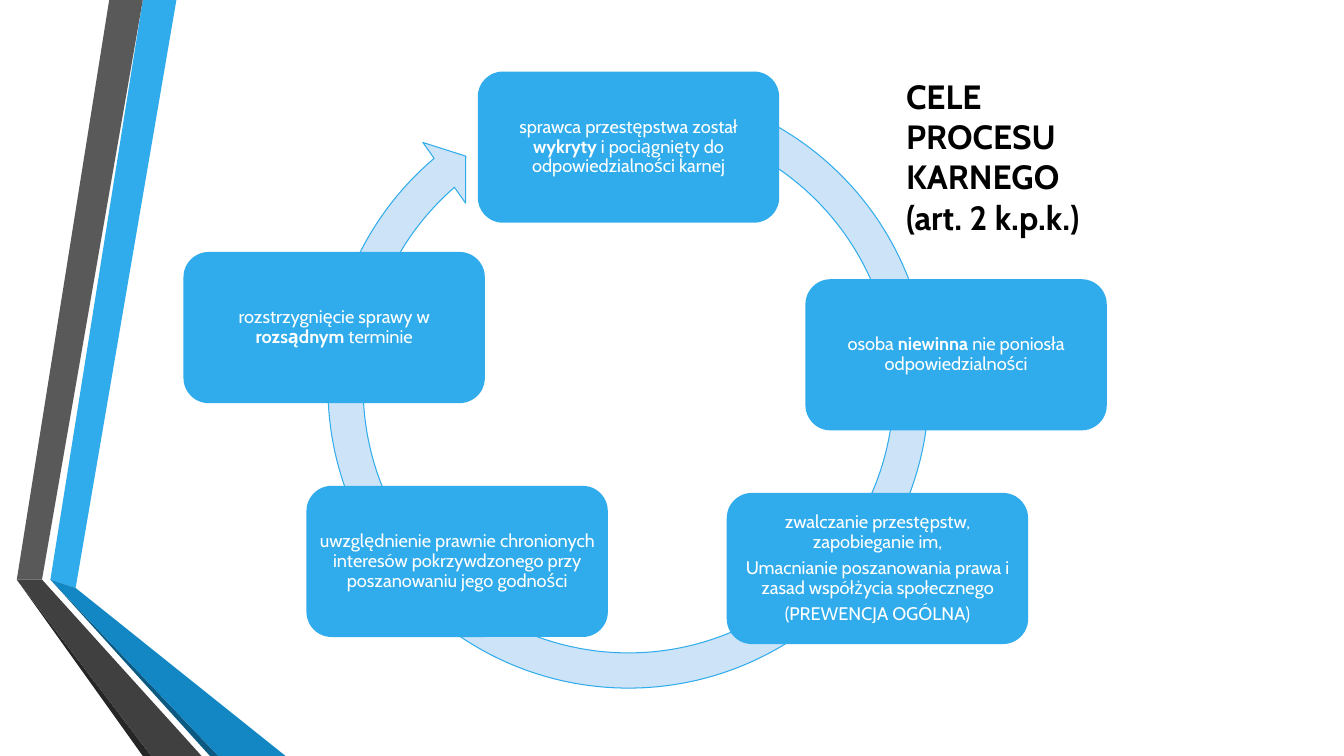
from collections import namedtuple
from dataclasses import dataclass

from pptx import Presentation
from pptx import util as u
from pptx.dml.color import RGBColor
from pptx.enum import shapes, text

Box = namedtuple("Box", "left top width height")
GRID = u.Inches(1) / 12
COLUMNS, ROWS = 160, 90


@dataclass(frozen=True)
class Theme:
    """Colours, font and type sizes of the slide."""
    font: str = "Cabin"
    title_size: int = 24
    card_size: int = 13
    sky: str = "30ACEC"
    pale: str = "CDE3F8"
    ocean: str = "1287C3"
    navy: str = "0C5A82"
    grey: str = "595959"
    charcoal: str = "404040"
    coal: str = "262626"
    white: str = "FFFFFF"
    black: str = "000000"


THEME = Theme()
RIBBONS = [
    (THEME.sky, [(4.08, 69.36), (7.32, 69.96), (18.84, 0), (15.48, 0)]),
    (THEME.grey, [(14.76, 0), (11.4, 0), (0, 68.76), (3.36, 69.24)]),
    (THEME.coal, [(0, 68.76), (15.48, 90), (16.2, 90)]),
    (THEME.navy, [(4.08, 69.48), (23.04, 90), (23.76, 90)]),
    (THEME.ocean, [(4.08, 69.36), (23.76, 90), (32.04, 90), (7.32, 69.96)]),
    (THEME.charcoal, [(22.32, 90), (3.36, 69.24), (0, 68.76), (16.2, 90)]),
]
CARD_WIDTH, CARD_HEIGHT = 35.88, 18
AIMS = [
    (35.04, 0.48, ["sprawca przestępstwa został *wykryty* i pociągnięty do odpowiedzialności karnej"]),
    (74.04, 25.2, ["osoba *niewinna* nie poniosła odpowiedzialności"]),
    (64.68, 50.64, ["zwalczanie przestępstw, zapobieganie im,",
                    "Umacnianie poszanowania prawa i zasad współżycia społecznego",
                    "(PREWENCJA OGÓLNA)"]),
    (14.64, 49.8, ["uwzględnienie prawnie chronionych interesów pokrzywdzonego "
                   "przy poszanowaniu jego godności"]),
    (0, 21.96, ["rozstrzygnięcie sprawy w *rozsądnym* terminie"]),
]
ARROW_LEFT, ARROW_SIZE = 14.88, 76.2
ARROW_ADJUSTMENTS = (0.055, 3.307, 137.627, 173.94, 0.058)


def place(box):
    """Turn a box in grid units into slide lengths."""
    return [u.Emu(round(length * GRID)) for length in box]


def paint(shape, fill, line=None):
    """Give a shape a flat fill and an optional thin outline."""
    shape.shadow.inherit = False
    shape.fill.solid()
    shape.fill.fore_color.rgb = RGBColor.from_string(fill)
    if line:
        shape.line.color.rgb = RGBColor.from_string(line)
        shape.line.width = u.Pt(0.75)
    else:
        shape.line.fill.background()


def write(frame, paragraphs, size, color, bold=False, align=None, spacing=None, after=None):
    """Fill a text frame; parts between asterisks are bold, newlines break the line."""
    frame.word_wrap = True
    for number, content in enumerate(paragraphs):
        paragraph = frame.add_paragraph() if number else frame.paragraphs[0]
        paragraph.alignment = align
        paragraph.line_spacing = spacing
        paragraph.space_after = after
        for row, line in enumerate(content.split("\n")):
            if row:
                paragraph.add_line_break()
            for part, words in enumerate(line.split("*")):
                run = paragraph.add_run()
                run.text = words
                run.font.name = THEME.font
                run.font.size = u.Pt(size)
                run.font.bold = bold or part % 2 == 1
                run.font.color.rgb = RGBColor.from_string(color)


def add_ribbons(slide, box):
    """Draw the folded ribbons along the left edge."""
    for color, points in RIBBONS:
        corners = [(box.left + x, box.top + y) for x, y in points]
        builder = slide.shapes.build_freeform(*corners[0], scale=GRID)
        builder.add_line_segments(corners[1:], close=True)
        paint(builder.convert_to_shape(), color)


def add_card(slide, box, paragraphs):
    """Draw one rounded card with centred text."""
    card = slide.shapes.add_shape(shapes.MSO_SHAPE.ROUNDED_RECTANGLE, *place(box))
    paint(card, THEME.sky)
    frame = card.text_frame
    frame.vertical_anchor = text.MSO_ANCHOR.MIDDLE
    frame.margin_left = frame.margin_right = u.Inches(0.05)
    frame.margin_top = frame.margin_bottom = u.Inches(0.05)
    write(frame, paragraphs, THEME.card_size, THEME.white,
          align=text.PP_ALIGN.CENTER, spacing=0.9, after=u.Pt(4.5))


def add_cycle(slide, box):
    """Draw the circular arrow and the cards around it."""
    ring = Box(box.left + ARROW_LEFT, box.top, ARROW_SIZE, ARROW_SIZE)
    arrow = slide.shapes.add_shape(shapes.MSO_SHAPE.CIRCULAR_ARROW, *place(ring))
    for index, value in enumerate(ARROW_ADJUSTMENTS):
        arrow.adjustments[index] = value
    paint(arrow, THEME.pale, THEME.sky)
    for x, y, paragraphs in AIMS:
        add_card(slide, Box(box.left + x, box.top + y, CARD_WIDTH, CARD_HEIGHT), paragraphs)


def add_title(slide, box):
    """Write the heading."""
    title = slide.shapes.add_textbox(*place(box))
    write(title.text_frame, ["CELE PROCESU KARNEGO \n(art. 2 k.p.k.)"],
          THEME.title_size, THEME.black, bold=True)


def main():
    """Build and save the slide."""
    presentation = Presentation()
    presentation.slide_width = u.Emu(round(COLUMNS * GRID))
    presentation.slide_height = u.Emu(round(ROWS * GRID))
    slide = presentation.slides.add_slide(presentation.slide_layouts[6])
    add_ribbons(slide, Box(1.92, 0, 32.04, ROWS))
    add_cycle(slide, Box(21.84, 8.04, 109.92, ARROW_SIZE))
    add_title(slide, Box(106.68, 8.4, 29.16, 20.64))
    presentation.save("out.pptx")


if __name__ == "__main__":
    main()
